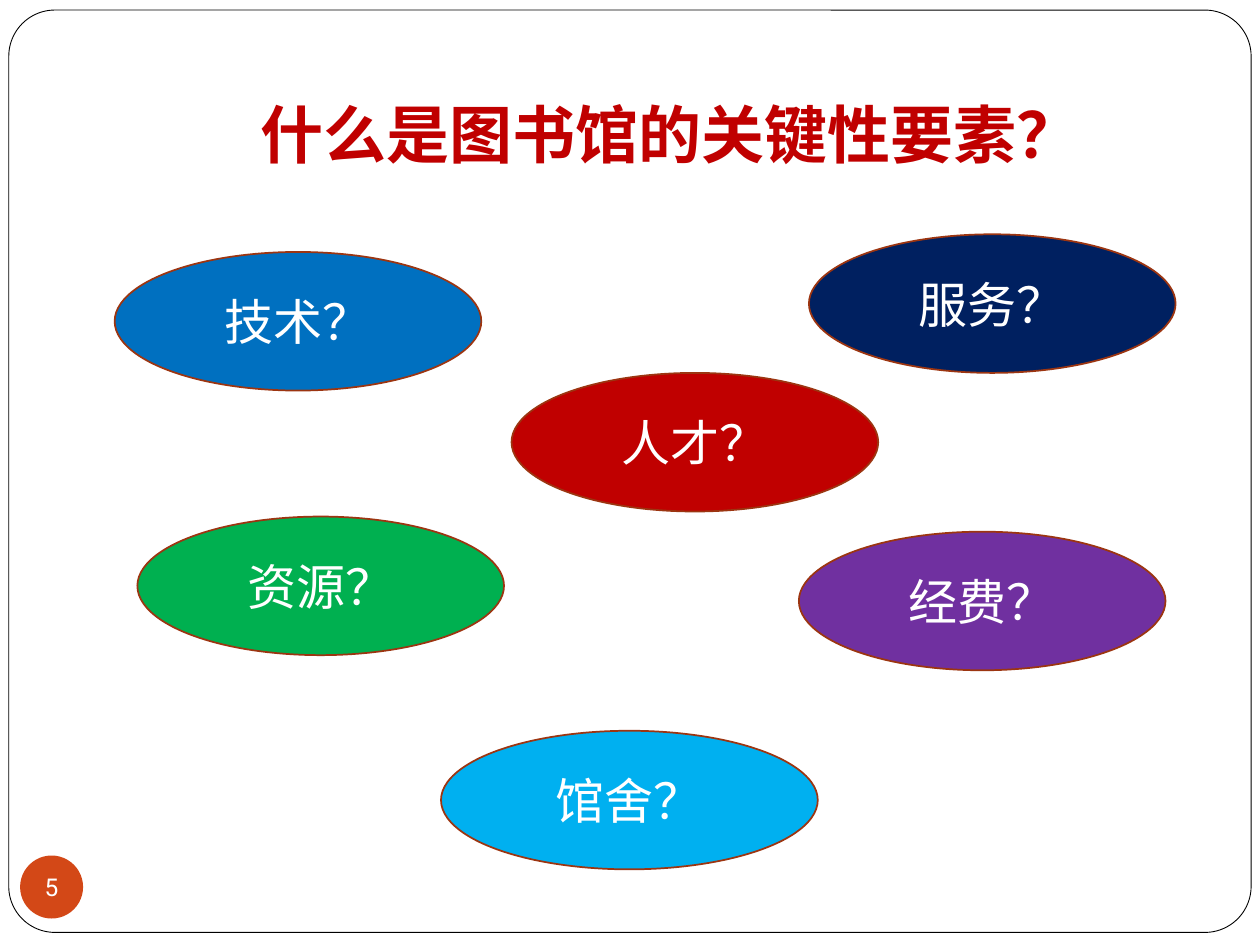
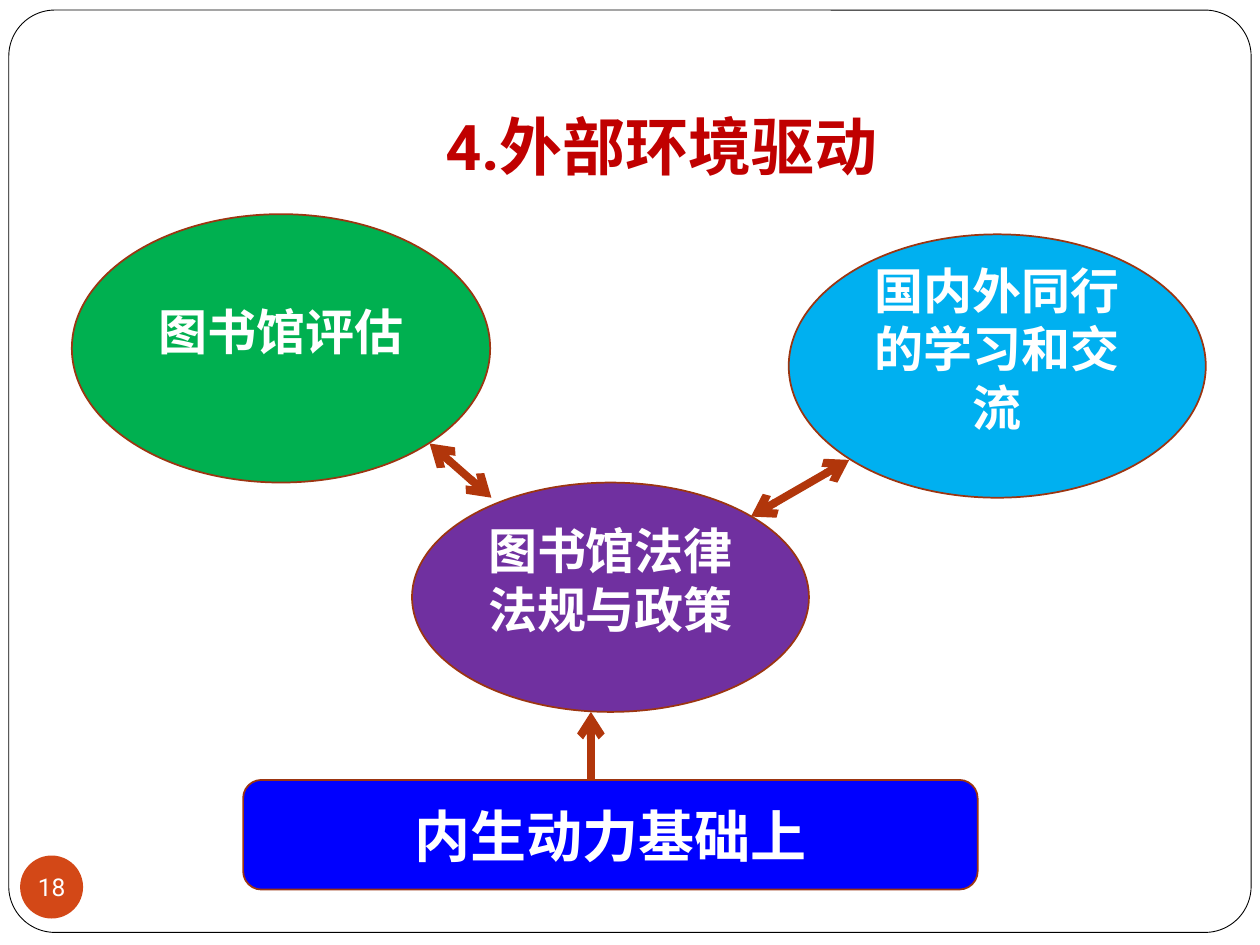
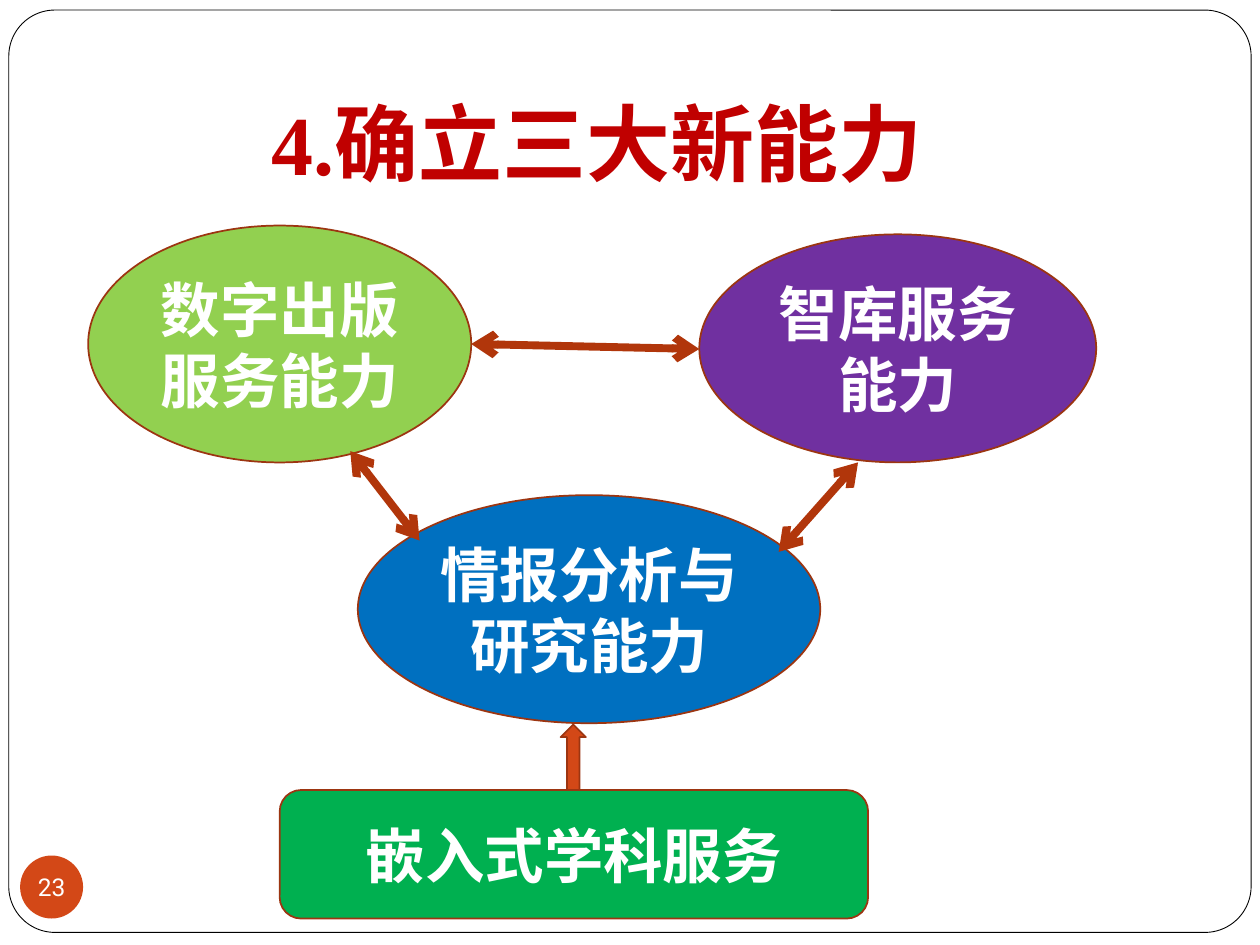
from lxml import etree
from pptx import Presentation
from pptx.dml.color import RGBColor
from pptx.enum.lang import MSO_LANGUAGE_ID
from pptx.enum.shapes import MSO_CONNECTOR, MSO_SHAPE
from pptx.enum.text import MSO_ANCHOR, PP_ALIGN
from pptx.oxml.ns import qn
from pptx.util import Inches, Pt

OVAL = MSO_SHAPE.OVAL
ROUNDED = MSO_SHAPE.ROUNDED_RECTANGLE
UP_ARROW = MSO_SHAPE.UP_ARROW
STRAIGHT = MSO_CONNECTOR.STRAIGHT
CENTER = PP_ALIGN.CENTER
TOP, MIDDLE, BOTTOM = MSO_ANCHOR.TOP, MSO_ANCHOR.MIDDLE, MSO_ANCHOR.BOTTOM
CHINESE = MSO_LANGUAGE_ID.SIMPLIFIED_CHINESE

SANS, SERIF = "Roboto", "Times New Roman"
TITLE_ONLY = 5
COLORS = {
    "white": "FFFFFF", "black": "000000", "red": "C00000", "orange": "D34817",
    "outline": "9C3511", "arrow": "B1360B", "sky": "00B0F0", "purple": "7030A0",
    "green": "00B050", "navy": "002060", "blue": "0070C0",
    "bright blue": "0000FF", "lime": "92D050",
}


def rgb(name):
    return RGBColor.from_string(COLORS[name])


def set_text(shape, text, size, font=SERIF, color="white", bold=False,
             anchor=MIDDLE):
    frame = shape.text_frame
    frame.text = text
    frame.word_wrap = True
    frame.vertical_anchor = anchor
    paragraph = frame.paragraphs[0]
    paragraph.alignment = CENTER
    for run in paragraph.runs:
        run.font.name = font
        run.font.size = Pt(size)
        run.font.bold = bold
        run.font.color.rgb = rgb(color)
        run.font.language_id = CHINESE
    return frame


def add_shape(slide, kind, box, fill, line="outline", line_width=1):
    shape = slide.shapes.add_shape(kind, *map(Inches, box))
    shape.shadow.inherit = False
    if fill:
        shape.fill.solid()
        shape.fill.fore_color.rgb = rgb(fill)
    else:
        shape.fill.background()
    if line:
        shape.line.color.rgb = rgb(line)
        shape.line.width = Pt(line_width)
    else:
        shape.line.fill.background()
    return shape


def add_label(slide, kind, box, fill, text, size, bold=True, lift=0):
    """Add a filled shape with centred text; lift is extra room below the text."""
    shape = add_shape(slide, kind, box, fill)
    frame = set_text(shape, text, size, bold=bold)
    frame.margin_bottom = Inches(0.05 + lift)


def add_arrow(slide, start, end, both_ends=True):
    connector = slide.shapes.add_connector(
        STRAIGHT, *map(Inches, (*start, *end)))
    connector.line.color.rgb = rgb("arrow")
    connector.line.width = Pt(4.5)
    line = connector.line._get_or_add_ln()
    for tag in ("a:headEnd", "a:tailEnd") if both_ends else ("a:tailEnd",):
        etree.SubElement(line, qn(tag), type="arrow")
    etree.SubElement(connector._element.spPr, qn("a:effectLst"))


def set_title(slide, text, box, size=36, font=SANS, anchor=BOTTOM):
    title = slide.shapes.title
    title.left, title.top, title.width, title.height = map(Inches, box)
    frame = set_text(title, text, size, font, "red", True, anchor)
    frame.margin_left = frame.margin_right = Inches(0.1)
    frame.margin_top = Inches(0.05)
    frame.margin_bottom = Inches(0.1)


def add_page(presentation, number):
    """Add a slide with the rounded frame and the page number badge."""
    slide = presentation.slides.add_slide(
        presentation.slide_layouts[TITLE_ONLY])
    frame = add_shape(slide, ROUNDED, (0.07, 0.08, 9.86, 7.32), None,
                      "black", 0.5)
    frame.adjustments[0] = 0.05
    badge = add_shape(slide, OVAL, (0.16, 6.79, 0.5, 0.5), "orange", None)
    text_frame = set_text(badge, str(number), 14, SANS)
    text_frame.word_wrap = False
    text_frame.margin_left = text_frame.margin_right = 0
    text_frame.margin_top = text_frame.margin_bottom = 0
    return slide


def build_key_elements(presentation):
    slide = add_page(presentation, 5)
    set_title(slide, "什么是图书馆的关键性要素？", (1.07, 0.21, 8.5, 1.25))
    for text, fill, left, top, width in (
            ("馆舍？", "sky", 3.5, 5.8, 2.99),
            ("经费？", "purple", 6.34, 4.22, 2.91),
            ("资源？", "green", 1.09, 4.1, 2.91),
            ("服务？", "navy", 6.42, 1.86, 2.91),
            ("技术？", "blue", 0.91, 2, 2.91),
            ("人才？", "red", 4.06, 2.96, 2.91)):
        add_label(slide, OVAL, (left, top, width, 1.1), fill, text, 28,
                  bold=False)


def build_external_drivers(presentation):
    slide = add_page(presentation, 18)
    set_title(slide, "4.外部环境驱动", (1, 0.3, 8.5, 1.25))
    for text, fill, box in (
            ("图书馆法律法规与政策", "purple", (3.27, 3.83, 3.15, 1.82)),
            ("国内外同行的学习和交流", "sky", (6.26, 1.86, 3.31, 2.09)),
            ("图书馆评估", "green", (0.57, 1.7, 3.32, 2.13))):
        add_label(slide, OVAL, box, fill, text, 28, lift=0.28)
    add_label(slide, ROUNDED, (1.93, 6.19, 5.83, 0.87), "bright blue",
              "内生动力基础上", 32)
    add_arrow(slide, (4.69, 6.19), (4.69, 5.65), both_ends=False)
    add_arrow(slide, (3.41, 3.52), (3.9, 3.95))
    add_arrow(slide, (5.96, 4.1), (6.74, 3.65))


def build_new_abilities(presentation):
    slide = add_page(presentation, 23)
    set_title(slide, "4.确立三大新能力", (1.75, 0.68, 5.98, 1), 48, SERIF, TOP)
    for text, fill, box in (
            ("情报分析与研究能力", "blue", (2.84, 3.93, 3.67, 1.81)),
            ("智库服务能力", "purple", (5.55, 1.86, 3.15, 1.81)),
            ("数字出版服务能力", "lime", (0.7, 1.79, 3.04, 1.88))):
        add_label(slide, OVAL, box, fill, text, 34)
    for start, end in (((3.74, 2.73), (5.55, 2.77)),
                       ((2.78, 3.58), (3.33, 4.29)),
                       ((6.18, 4.38), (6.81, 3.67))):
        add_arrow(slide, start, end)
    add_label(slide, ROUNDED, (2.22, 6.27, 4.67, 1.02), "green",
              "嵌入式学科服务", 34)
    add_shape(slide, UP_ARROW, (4.45, 5.75, 0.2, 0.52), "orange")


def main():
    presentation = Presentation()
    presentation.slide_width = Inches(10)
    presentation.slide_height = Inches(7.5)
    build_key_elements(presentation)
    build_external_drivers(presentation)
    build_new_abilities(presentation)
    presentation.save("out.pptx")


if __name__ == "__main__":
    main()
